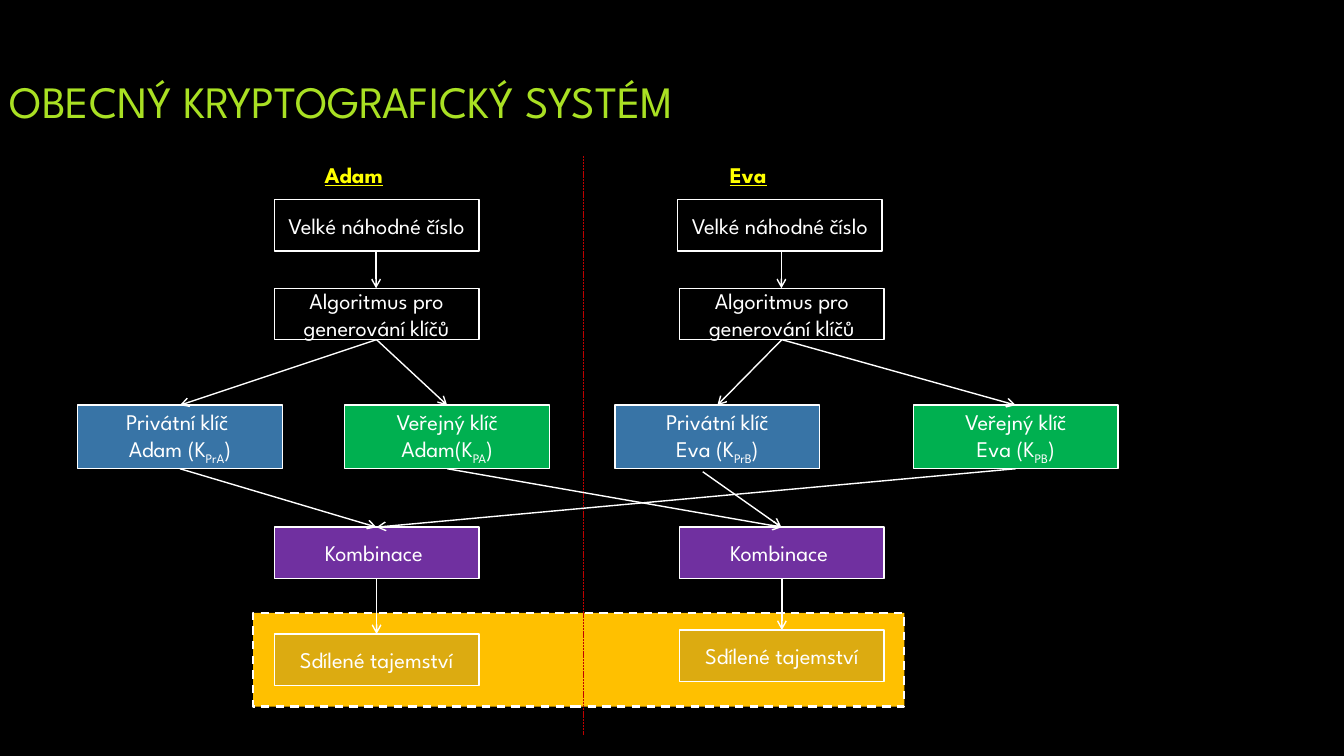
from lxml.etree import SubElement
from pptx import Presentation
from pptx.dml.color import RGBColor as Rgb
from pptx.enum.dml import MSO_LINE as Dash
from pptx.enum.shapes import MSO_CONNECTOR as Conn, MSO_SHAPE as Kind
from pptx.enum.text import MSO_ANCHOR as Anchor, MSO_AUTO_SIZE as Auto, PP_ALIGN as Align
from pptx.oxml.ns import qn
from pptx.util import Pt

HUES = {
    "black": "000000", "white": "FFFFFF", "lime": "A9E023", "yellow": "FFFF00",
    "blue": "3874A6", "green": "00B050", "violet": "7030A0", "amber": "FFC000",
    "gold": "DCAB11", "red": "C00000",
}
BODY = {"name": "League Spartan", "size": Pt(16)}
TITLE = BODY | {"size": Pt(32)}
HEAD = BODY | {"bold": True, "underline": True}
BOX_W, BOX_H, KEY_H = 203, 51, 63


class Board:
    """Draw styled elements on one slide, measured in px of 1/100 inch."""

    def __init__(self, wide, high):
        self.deck = Presentation()
        self.deck.slide_width, self.deck.slide_height = self.px(wide, high)
        self.slide = self.deck.slides.add_slide(self.deck.slide_layouts[6])
        self.paint(self.slide.background.fill, "black")

    def px(self, *sizes):
        return [size * 9144 for size in sizes]

    def paint(self, fill, hue):
        if hue:
            fill.solid()
            fill.fore_color.rgb = Rgb.from_string(HUES[hue])
        else:
            fill.background()

    def stroke(self, line, hue, width, dash=None):
        self.paint(line.fill, hue)
        line.width = Pt(width)
        if dash:
            line.dash_style = dash

    def letter(self, para, text, style, hue):
        for part, piece in enumerate(text.split("|")):
            for row, words in enumerate(piece.split("\n")):
                if row:
                    para.add_line_break()
                run = para.add_run()
                run.text = words
                for key, value in style.items():
                    setattr(run.font, key, value)
                self.paint(run.font.fill, hue)
                if part % 2:
                    run._r.get_or_add_rPr().set("baseline", "-25000")

    def label(self, area, text, style, hue, **form):
        frame = self.slide.shapes.add_textbox(*self.px(*area)).text_frame
        frame.word_wrap = True
        for key, value in form.items():
            setattr(frame, key, value)
        self.letter(frame.paragraphs[0], text, style, hue)

    def box(self, area, text="", fill=None, width=1, dash=None):
        shape = self.slide.shapes.add_shape(Kind.RECTANGLE, *self.px(*area))
        shape.shadow.inherit = False
        self.paint(shape.fill, fill)
        self.stroke(shape.line, "white", width, dash)
        if text:
            frame = shape.text_frame
            frame.word_wrap = True
            frame.vertical_anchor = Anchor.MIDDLE
            frame.paragraphs[0].alignment = Align.CENTER
            self.letter(frame.paragraphs[0], text, BODY, "white")
        return shape

    def line(self, ends, hue="white", width=1, dash=None, arrow=True):
        line = self.slide.shapes.add_connector(Conn.STRAIGHT, *self.px(*ends))
        self.stroke(line.line, hue, width, dash)
        if arrow:
            SubElement(line.line._get_or_add_ln(), qn("a:tailEnd"), type="arrow")
        SubElement(line._element.spPr, qn("a:effectLst"))
        return line

    def link(self, start, end):
        line = self.line((0, 0, 0, 0))
        line.begin_connect(start, 2)
        line.end_connect(end, 0)


def main():
    board = Board(1333, 750)
    board.label((0, 67, 1333, 65), "OBECNÝ KRYPTOGRAFICKÝ SYSTÉM", TITLE, "lime",
                vertical_anchor=Anchor.MIDDLE)
    board.box((251, 608, 646, 93), fill="amber", width=1.5, dash=Dash.DASH)
    board.line((579, 155, 579, 729), "red", 0.5, Dash.SQUARE_DOT, arrow=False)

    sides = [
        ("Adam", 312, 272, 272, 629,
         (77, "Privátní klíč \nAdam (K|PrA|)"), (342, "Veřejný klíč\nAdam(K|PA|)")),
        ("Eva", 714, 672, 674, 625,
         (610, "Privátní klíč\nEva (K|PrB|)"), (906, "Veřejný klíč\nEva (K|PB|)")),
    ]
    keys, mixes = [], []
    for name, head, seed, left, last, *pair in sides:
        board.label((head, 155, 92, 37), name, HEAD, "yellow",
                    auto_size=Auto.SHAPE_TO_FIT_TEXT)
        board.box((seed, 198, BOX_W, BOX_H), "Velké náhodné číslo")
        maker = board.box((left, 286, BOX_W, BOX_H), "Algoritmus pro generování klíčů")
        mix = board.box((left, 523, BOX_W, BOX_H), "Kombinace ", "violet")
        secret = board.box((left, last, BOX_W, BOX_H), "Sdílené tajemství", "gold")
        duo = [board.box((x, 402, BOX_W, KEY_H), text, hue)
               for (x, text), hue in zip(pair, ("blue", "green"))]
        mid = left + BOX_W // 2
        board.line((mid, 249, mid, 286))
        board.link(mix, secret)
        for key in duo:
            board.link(maker, key)
        keys.append(duo)
        mixes.append(mix)

    (own, shared), (_, other) = keys
    adam, eva = mixes
    for start, end in ((own, adam), (other, adam), (shared, eva)):
        board.link(start, end)
    board.line((697, 468, 775, 523))
    board.deck.save("out.pptx")


if __name__ == "__main__":
    main()
